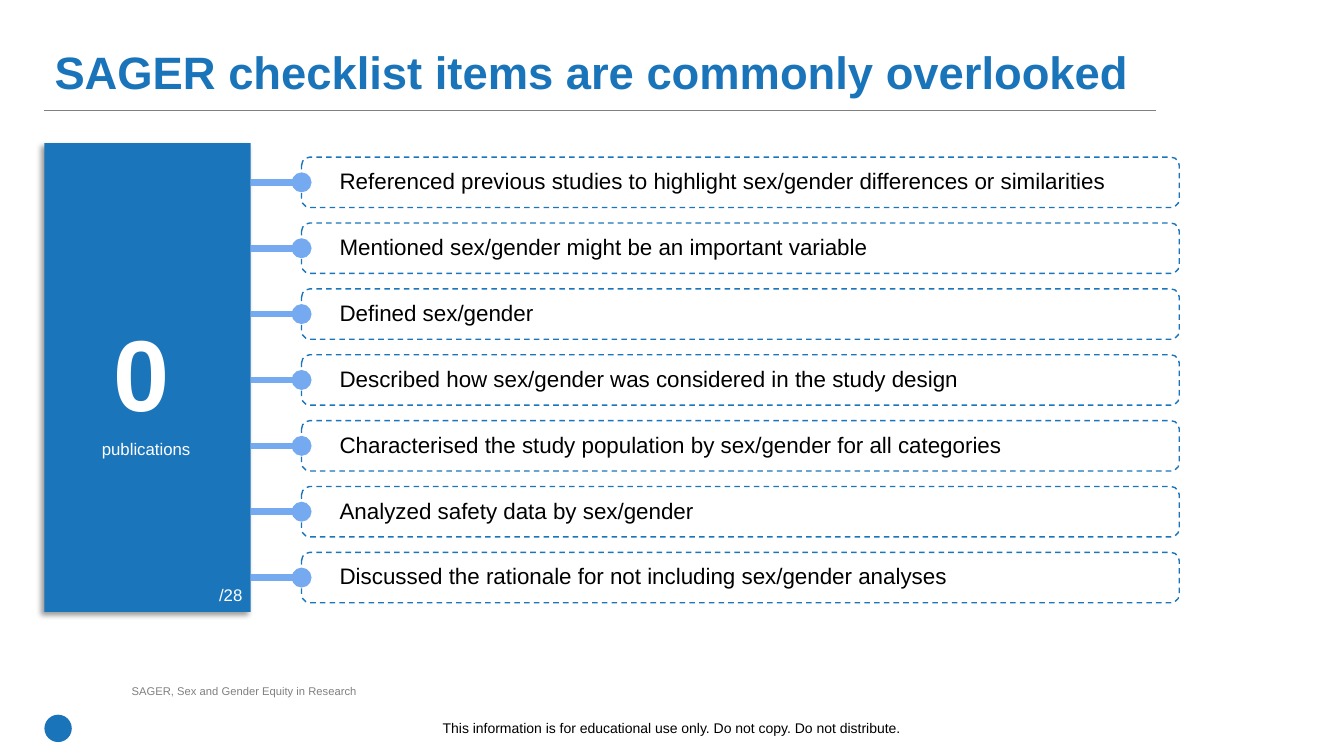
from lxml import etree
from pptx import Presentation
from pptx.dml.color import RGBColor
from pptx.enum import dml, shapes, text
from pptx.oxml import parse_xml
from pptx.oxml.ns import nsdecls, qn
from pptx.util import Cm, Pt

TITLE = "SAGER checklist items are commonly overlooked"
ITEMS = [
    "Referenced previous studies to highlight sex/gender differences or similarities",
    "Mentioned sex/gender might be an important variable",
    "Defined sex/gender",
    "Described how sex/gender was considered in the study design",
    "Characterised the study population by sex/gender for all categories",
    "Analyzed safety data by sex/gender",
    "Discussed the rationale for not including sex/gender analyses",
]
HEX = {"blue": "1A74BA", "panel": "1B75BB", "link": "76AAF0", "rule": "808080",
       "note": "808080", "black": "000000", "white": "FFFFFF"}
MID, LEFT = text.PP_ALIGN.CENTER, text.PP_ALIGN.LEFT
# wording, (left, top, width, height) in cm, align, font
LABELS = [
    ("This information is for educational use only. Do not copy. Do not distribute.",
     (0.97, 18.01, 31.9, 1.02), MID, {"size": 10, "color": "black"}),
    ("0", (1.63, 7.7, 3.89, 3.33), MID, {"size": 72, "color": "white", "bold": True}),
    ("publications", (2.21, 10.92, 2.95, 0.76), MID, {"size": 12, "color": "white"}),
    ("/28", (5.08, 14.6, 1.47, 0.76), MID, {"size": 12, "color": "white"}),
    ("SAGER, Sex and Gender Equity in Research",
     (3.07, 17.12, 27.91, 0.61), LEFT, {"size": 8, "color": "note"}),
]
EDGE = 1.12                 # left margin
PANEL = (EDGE, 3.61, 5.2, 11.81)
ROW = {"left": 7.6, "top": 3.96, "width": 22.12, "height": 1.27, "step": 1.66}

deck = Presentation()
deck.slide_width, deck.slide_height = Cm(33.87), Cm(19.05)
slide = deck.slides.add_slide(deck.slide_layouts[5])


def rgb(key):
    return RGBColor.from_string(HEX[key])


def style(para, align, form):
    para.alignment = align
    para.font.name = "Arial"
    for key, val in form.items():
        if key == "color":
            para.font.color.rgb = rgb(val)
        else:
            setattr(para.font, key, Pt(val) if key == "size" else val)


def label(words, box, align, form):
    frame = slide.shapes.add_textbox(*map(Cm, box)).text_frame
    frame.word_wrap = True
    frame.text = words
    style(frame.paragraphs[0], align, form)


def block(kind, box, fill=None):
    shape = slide.shapes.add_shape(kind, *map(Cm, box))
    shape.shadow.inherit = False
    if fill:
        shape.fill.solid()
        shape.fill.fore_color.rgb = rgb(fill)
        shape.line.fill.background()
    else:
        shape.fill.background()
    return shape


def link(left, right, y, color, width):
    line = slide.shapes.add_connector(
        shapes.MSO_CONNECTOR.STRAIGHT, Cm(left), Cm(y), Cm(right), Cm(y))
    line.line.color.rgb = rgb(color)
    line.line.width = Pt(width)
    etree.SubElement(line._element.spPr, qn("a:effectLst"))
    return line


def shade(shape):
    """Drop a soft shadow to the lower left."""
    fx = shape._element.spPr.find(qn("a:effectLst"))
    fx.append(parse_xml(
        f'<a:outerShdw {nsdecls("a")} blurRad="50800" dist="38100" dir="8100000" '
        'algn="tr" rotWithShape="0"><a:srgbClr val="000000">'
        '<a:alpha val="40000"/></a:srgbClr></a:outerShdw>'))


def row(index, words):
    top = ROW["top"] + index * ROW["step"]
    box = block(shapes.MSO_SHAPE.ROUNDED_RECTANGLE,
                (ROW["left"], top, ROW["width"], ROW["height"]))
    box.line.color.rgb = rgb("panel")
    box.line.width = Pt(1)
    box.line.dash_style = dml.MSO_LINE.DASH
    stem = link(PANEL[0] + PANEL[2], ROW["left"], top + ROW["height"] / 2, "link", 4.75)
    etree.SubElement(stem.line._get_or_add_ln(), qn("a:tailEnd"), type="oval")
    label(words, (8.31, top + 0.13, 20.27, 0.94), LEFT, {"size": 16, "color": "black"})


title = slide.shapes.title
title.left, title.top, title.width, title.height = map(Cm, (EDGE, 0.53, 28.09, 2.72))
title.text_frame.text = TITLE
title.text_frame.vertical_anchor = text.MSO_ANCHOR.MIDDLE
head = title.text_frame.paragraphs[0]
head.line_spacing = 0.9
style(head, LEFT, {"size": 32.4, "color": "blue", "bold": True})

block(shapes.MSO_SHAPE.OVAL, (EDGE, 18.01, 0.69, 0.69), "blue")
link(EDGE, 29.13, 2.77, "rule", 0.5)
shade(block(shapes.MSO_SHAPE.RECTANGLE, PANEL, "panel"))
for index, words in enumerate(ITEMS):
    row(index, words)
for item in LABELS:
    label(*item)

deck.save("out.pptx")
